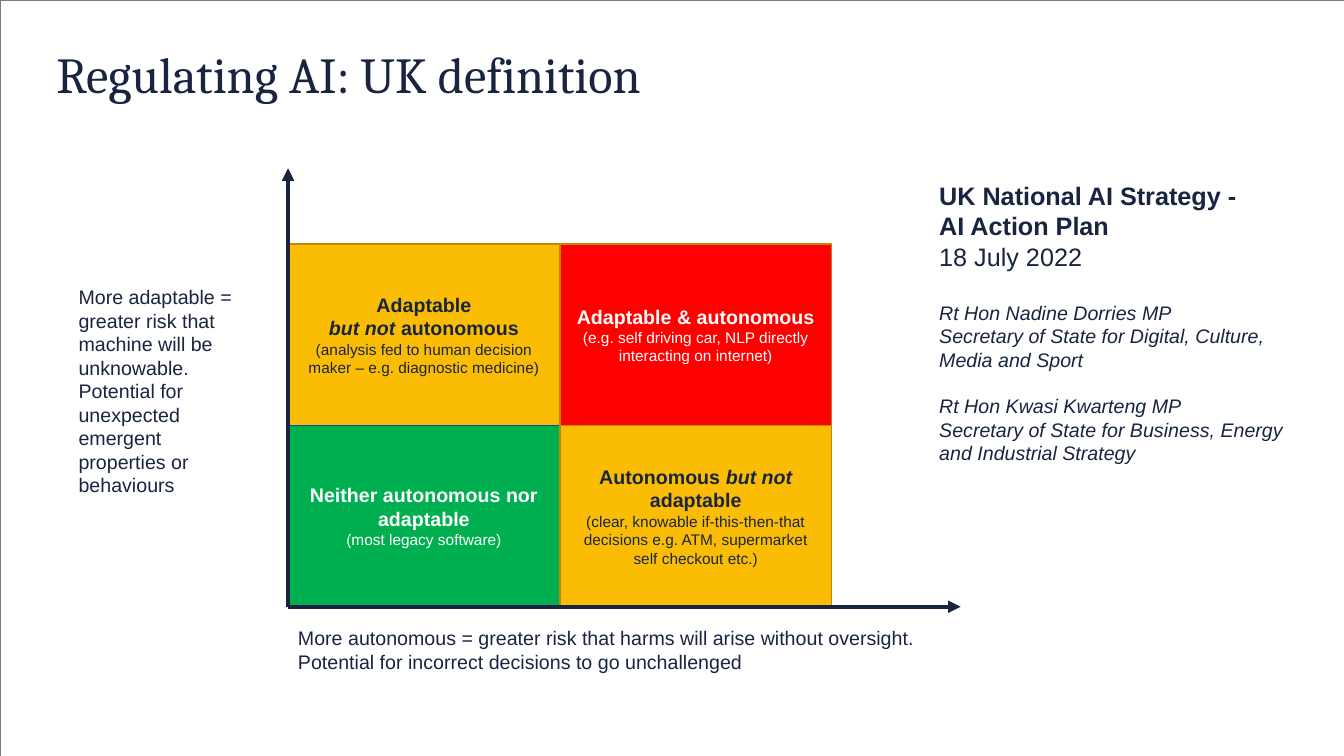
from dataclasses import dataclass

from lxml import etree
from pptx import Presentation
from pptx.dml.color import RGBColor
from pptx.enum.shapes import MSO_CONNECTOR, MSO_SHAPE
from pptx.enum.text import MSO_ANCHOR, PP_ALIGN
from pptx.oxml.ns import qn
from pptx.slide import Slide
from pptx.text.text import TextFrame
from pptx.util import Cm, Pt

RECTANGLE = MSO_SHAPE.RECTANGLE
STRAIGHT = MSO_CONNECTOR.STRAIGHT
TOP, MIDDLE, BOTTOM = MSO_ANCHOR.TOP, MSO_ANCHOR.MIDDLE, MSO_ANCHOR.BOTTOM
LEFT, CENTER = PP_ALIGN.LEFT, PP_ALIGN.CENTER


@dataclass(frozen=True)
class Theme:
    navy: str = "182440"
    white: str = "FFFFFF"
    amber: str = "FBBD04"
    amber_edge: str = "BA8C03"
    green: str = "00B050"
    green_edge: str = "005599"
    red: str = "FF0000"
    frame: str = "7B7B7B"
    heading_font: str = "Cambria"
    body_font: str = "Arial"
    title: float = 36
    lead: float = 18
    body: float = 14
    detail: float = 11


THEME = Theme()


@dataclass(frozen=True)
class Span:
    text: str
    size: float = THEME.body
    bold: bool = False
    italic: bool = False
    font: str = THEME.body_font


@dataclass(frozen=True)
class Para:
    spans: tuple[Span, ...]
    space_before: float = 0
    line_spacing: float = 1.0


@dataclass(frozen=True)
class TextBlock:
    left: float
    top: float
    width: float
    height: float
    paras: tuple[Para, ...]
    anchor: MSO_ANCHOR = TOP
    inset: bool = True


@dataclass(frozen=True)
class Quadrant:
    column: int
    row: int
    fill: str
    edge: str
    ink: str
    heading: tuple[Span, ...]
    detail: str


@dataclass(frozen=True)
class Axis:
    end_x: float
    end_y: float


SLIDE_WIDTH, SLIDE_HEIGHT = 33.87, 19.05
ORIGIN_X, ORIGIN_Y = 7.26, 15.29
CELL_WIDTH, CELL_HEIGHT = 6.85, 4.57
ROWS = 2


def strong(text: str, italic: bool = False) -> Span:
    """Return a bold quadrant heading span."""
    return Span(text, bold=True, italic=italic)


def line(text: str, size: float = THEME.body, bold: bool = False,
         italic: bool = False, space_before: float = 0) -> Para:
    """Return a paragraph made of a single span."""
    return Para((Span(text, size, bold, italic),), space_before)


QUADRANTS = (
    Quadrant(0, 0, THEME.amber, THEME.amber_edge, THEME.navy,
             (strong("Adaptable\v"), strong("but not ", True), strong("autonomous")),
             "(analysis fed to human decision maker – e.g. diagnostic medicine)"),
    Quadrant(0, 1, THEME.green, THEME.green_edge, THEME.white,
             (strong("Neither autonomous nor adaptable"),),
             "(most legacy software)"),
    Quadrant(1, 0, THEME.red, THEME.amber_edge, THEME.white,
             (strong("Adaptable & autonomous"),),
             "(e.g. self driving car, NLP directly interacting on internet)"),
    Quadrant(1, 1, THEME.amber, THEME.amber_edge, THEME.navy,
             (strong("Autonomous "), strong("but not ", True), strong("adaptable")),
             "(clear, knowable if-this-then-that decisions e.g. ATM, "
             "supermarket self checkout etc.)"),
)

AXES = (Axis(ORIGIN_X, 4.24), Axis(24.21, ORIGIN_Y))

TEXT_BLOCKS = (
    TextBlock(1.73, 7.06, 4.78, 5.64, (
        line("More adaptable = greater risk that machine will be unknowable. "
             "Potential for unexpected emergent properties or behaviours"),)),
    TextBlock(ORIGIN_X, 15.65, 16.36, 1.75, (
        line("More autonomous = greater risk that harms will arise without oversight. "
             "Potential for incorrect decisions to go unchallenged"),)),
    TextBlock(1.42, 1.02, 30.99, 1.6, (
        Para((Span("Regulating AI: UK definition", THEME.title,
                   font=THEME.heading_font),), line_spacing=0.9),), BOTTOM, False),
    TextBlock(23.42, 4.42, 9.22, 7.52, (
        line("UK National AI Strategy -", THEME.lead, bold=True),
        line("AI Action Plan", THEME.lead, bold=True),
        line("18 July 2022", THEME.lead),
        line("Rt Hon Nadine Dorries MP", italic=True, space_before=21),
        line("Secretary of State for Digital, Culture, Media and Sport", italic=True),
        line("Rt Hon Kwasi Kwarteng MP", italic=True, space_before=16.5),
        line("Secretary of State for Business, Energy and Industrial Strategy",
             italic=True))),
)


def write_text(frame: TextFrame, paras: tuple[Para, ...], ink: str,
               align: PP_ALIGN, anchor: MSO_ANCHOR) -> None:
    """Fill a text frame run by run."""
    frame.word_wrap = True
    frame.vertical_anchor = anchor
    for index, para in enumerate(paras):
        target = frame.paragraphs[0] if index == 0 else frame.add_paragraph()
        target.alignment = align
        target.line_spacing = para.line_spacing
        if para.space_before:
            target.space_before = Pt(para.space_before)
        for span in para.spans:
            run = target.add_run()
            run.text = span.text.rstrip("\v")
            run.font.name = span.font
            run.font.size = Pt(span.size)
            run.font.bold = span.bold
            run.font.italic = span.italic
            run.font.color.rgb = RGBColor.from_string(ink)
            if span.text.endswith("\v"):
                target.add_line_break()


def draw_frame(page: Slide) -> None:
    """Outline the whole page with a hairline."""
    border = page.shapes.add_shape(RECTANGLE, 0, 0, Cm(SLIDE_WIDTH), Cm(SLIDE_HEIGHT))
    border.shadow.inherit = False
    border.fill.background()
    border.line.color.rgb = RGBColor.from_string(THEME.frame)
    border.line.width = Pt(0.15)


def draw_quadrant(page: Slide, quadrant: Quadrant) -> None:
    """Draw one cell of the risk matrix."""
    box = page.shapes.add_shape(
        RECTANGLE,
        Cm(ORIGIN_X + quadrant.column * CELL_WIDTH),
        Cm(ORIGIN_Y - (ROWS - quadrant.row) * CELL_HEIGHT),
        Cm(CELL_WIDTH), Cm(CELL_HEIGHT))
    box.shadow.inherit = False
    box.fill.solid()
    box.fill.fore_color.rgb = RGBColor.from_string(quadrant.fill)
    box.line.color.rgb = RGBColor.from_string(quadrant.edge)
    box.line.width = Pt(1)
    paras = (Para(quadrant.heading), line(quadrant.detail, THEME.detail))
    write_text(box.text_frame, paras, quadrant.ink, CENTER, MIDDLE)


def draw_axis(page: Slide, axis: Axis) -> None:
    """Draw an arrow from the matrix origin."""
    arrow = page.shapes.add_connector(
        STRAIGHT, Cm(ORIGIN_X), Cm(ORIGIN_Y), Cm(axis.end_x), Cm(axis.end_y))
    arrow.line.color.rgb = RGBColor.from_string(THEME.navy)
    arrow.line.width = Pt(3)
    properties = arrow.element.spPr
    etree.SubElement(properties.find(qn("a:ln")), qn("a:tailEnd"), type="triangle")
    etree.SubElement(properties, qn("a:effectLst"))


def draw_text(page: Slide, block: TextBlock) -> None:
    """Place a text box on the page."""
    box = page.shapes.add_textbox(
        Cm(block.left), Cm(block.top), Cm(block.width), Cm(block.height))
    frame = box.text_frame
    if not block.inset:
        frame.margin_left = frame.margin_right = 0
        frame.margin_top = frame.margin_bottom = 0
    write_text(frame, block.paras, THEME.navy, LEFT, block.anchor)


def main() -> None:
    """Build and save the deck."""
    deck = Presentation()
    deck.slide_width, deck.slide_height = Cm(SLIDE_WIDTH), Cm(SLIDE_HEIGHT)
    page = deck.slides.add_slide(deck.slide_layouts[6])
    draw_frame(page)
    for quadrant in QUADRANTS:
        draw_quadrant(page, quadrant)
    for axis in AXES:
        draw_axis(page, axis)
    for block in TEXT_BLOCKS:
        draw_text(page, block)
    deck.save("out.pptx")


if __name__ == "__main__":
    main()
